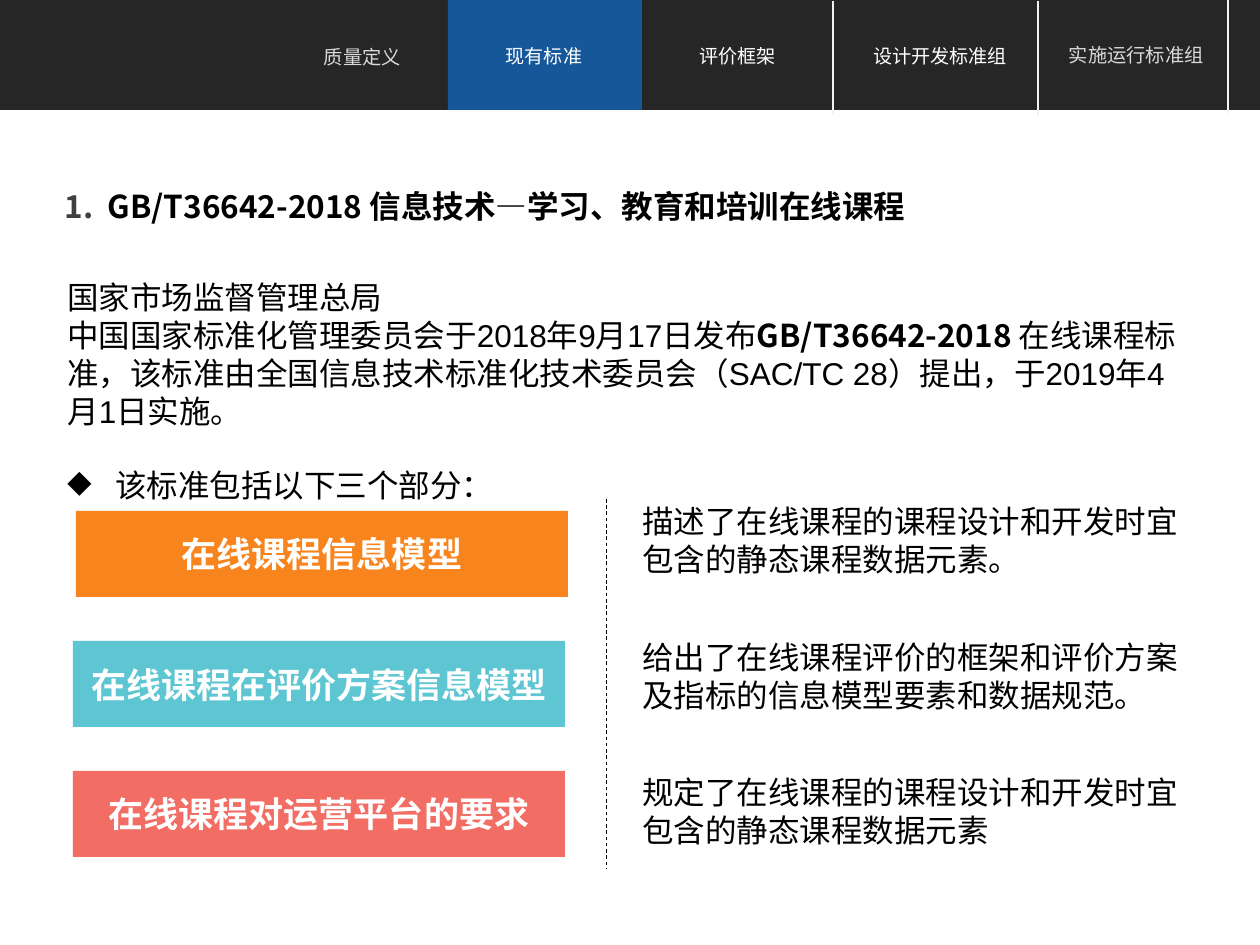
import pptx
import pptx.util
import pptx.dml.color
import pptx.enum.dml
import pptx.enum.shapes
import pptx.enum.text
import lxml.etree

ink = {
    "bar": "262626", "blue": "165799", "pale": "D9D9D9", "white": "FFFFFF",
    "rule": "F2F2F2", "grey": "404040", "black": "000000",
    "orange": "F8841D", "teal": "5EC6D3", "red": "F26D64",
}
sans = "Noto Sans CJK SC"
scale = 914400 / 126
align = pptx.enum.text.PP_ALIGN
anchor = pptx.enum.text.MSO_ANCHOR
rect = pptx.enum.shapes.MSO_SHAPE.RECTANGLE


def px(*nums):
    return [round(n * scale) for n in nums]


def write(para, text, size=18, face="Arial", color="black", bold=False, side=align.LEFT):
    para.alignment = side
    run = para.add_run()
    run.text = text
    run.font.size = pptx.util.Pt(size)
    run.font.name = face
    run.font.bold = bold
    run.font.color.rgb = pptx.dml.color.RGBColor.from_string(ink[color])
    east = lxml.etree.SubElement(run.font._element, pptx.oxml.ns.qn("a:ea"))
    east.set("typeface", sans)


deck = pptx.Presentation()
deck.slide_width, deck.slide_height = px(1260, 945)
slide = deck.slides.add_slide(deck.slide_layouts[5])
shapes = slide.shapes

blocks = [
    (0, 0, 1260, 110, "bar", ""),
    (448, 0, 194, 110, "blue", ""),
    (76, 511, 492, 86, "orange", "在线课程信息模型"),
    (73, 641, 492, 86, "teal", "在线课程在评价方案信息模型"),
    (73, 771, 492, 86, "red", "在线课程对运营平台的要求"),
]
for left, top, wide, high, color, text in blocks:
    block = shapes.add_shape(rect, *px(left, top, wide, high))
    block.shadow.inherit = False
    block.fill.solid()
    block.fill.fore_color.rgb = pptx.dml.color.RGBColor.from_string(ink[color])
    block.line.fill.background()
    if text:
        frame = block.text_frame
        frame.margin_left = frame.margin_right = frame.margin_top = frame.margin_bottom = 0
        frame.vertical_anchor = anchor.MIDDLE
        write(frame.paragraphs[0], text, size=20, face="Arial Narrow",
              color="white", bold=True, side=align.CENTER)

tabs = [
    (276, 39, 173, "质量定义", 11, "pale"),
    (452, 38, 184, "现有标准", 10.9, "white"),
    (645, 38, 185, "评价框架", 10.9, "white"),
    (842, 38, 196, "设计开发标准组", 10.9, "white"),
    (1056, 37, 161, "实施运行标准组", 11, "pale"),
]
for left, top, wide, text, size, color in tabs:
    box = shapes.add_textbox(*px(left, top, wide, 35))
    box.text_frame.word_wrap = True
    write(box.text_frame.paragraphs[0], text, size=size, face=sans,
          color=color, side=align.CENTER)

lines = [
    (833, 1, 115, "rule", 0.75),
    (1038, 1, 115, "rule", 0.75),
    (1228, 0, 113, "rule", 0.75),
    (606, 499, 868, "black", 0.5),
]
for left, top, end, color, width in lines:
    line = shapes.add_connector(pptx.enum.shapes.MSO_CONNECTOR.STRAIGHT,
                                *px(left, top, left, end))
    line.line.color.rgb = pptx.dml.color.RGBColor.from_string(ink[color])
    line.line.width = pptx.util.Pt(width)
    if color == "black":
        line.line.dash_style = pptx.enum.dml.MSO_LINE.DASH
    lxml.etree.SubElement(line._element.spPr, pptx.oxml.ns.qn("a:effectLst"))

title = shapes.title
title.left, title.top, title.width, title.height = px(52, 181, 960, 83)
title.text_frame.word_wrap = True
title.text_frame.auto_size = pptx.enum.text.MSO_AUTO_SIZE.NONE
title.text_frame.vertical_anchor = anchor.TOP
head = title.text_frame.paragraphs[0]
write(head, "1.  ", face=sans, color="grey", bold=True)
write(head, "GB/T36642-2018 信息技术—学习、教育和培训在线课程", face=sans, bold=True)

body = shapes.add_textbox(*px(55, 272, 1149, 246)).text_frame
body.word_wrap = True
para = body.paragraphs[0]
write(para, "国家市场监督管理总局 中国国家标准化管理委员会于2018年9月17日发布")
write(para, "GB/T36642-2018 ", face=sans, bold=True)
write(para, "在线课程标准，该标准由全国信息技术标准化技术委员会（SAC/TC 28）提出，于2019年4月1日实施。")

item = body.add_paragraph()
item.space_before = pptx.util.Pt(21)
props = item._p.get_or_add_pPr()
dent = px(48)[0]
props.set("marL", str(dent))
props.set("indent", str(-dent))
lxml.etree.SubElement(props, pptx.oxml.ns.qn("a:buChar")).set("char", "◆")
write(item, "该标准包括以下三个部分：")

notes = [
    (496, "描述了在线课程的课程设计和开发时宜包含的静态课程数据元素。"),
    (632, "给出了在线课程评价的框架和评价方案及指标的信息模型要素和数据规范。"),
    (767, "规定了在线课程的课程设计和开发时宜包含的静态课程数据元素"),
]
for top, text in notes:
    box = shapes.add_textbox(*px(630, top, 588, 89))
    box.text_frame.word_wrap = True
    write(box.text_frame.paragraphs[0], text)

deck.save("out.pptx")
